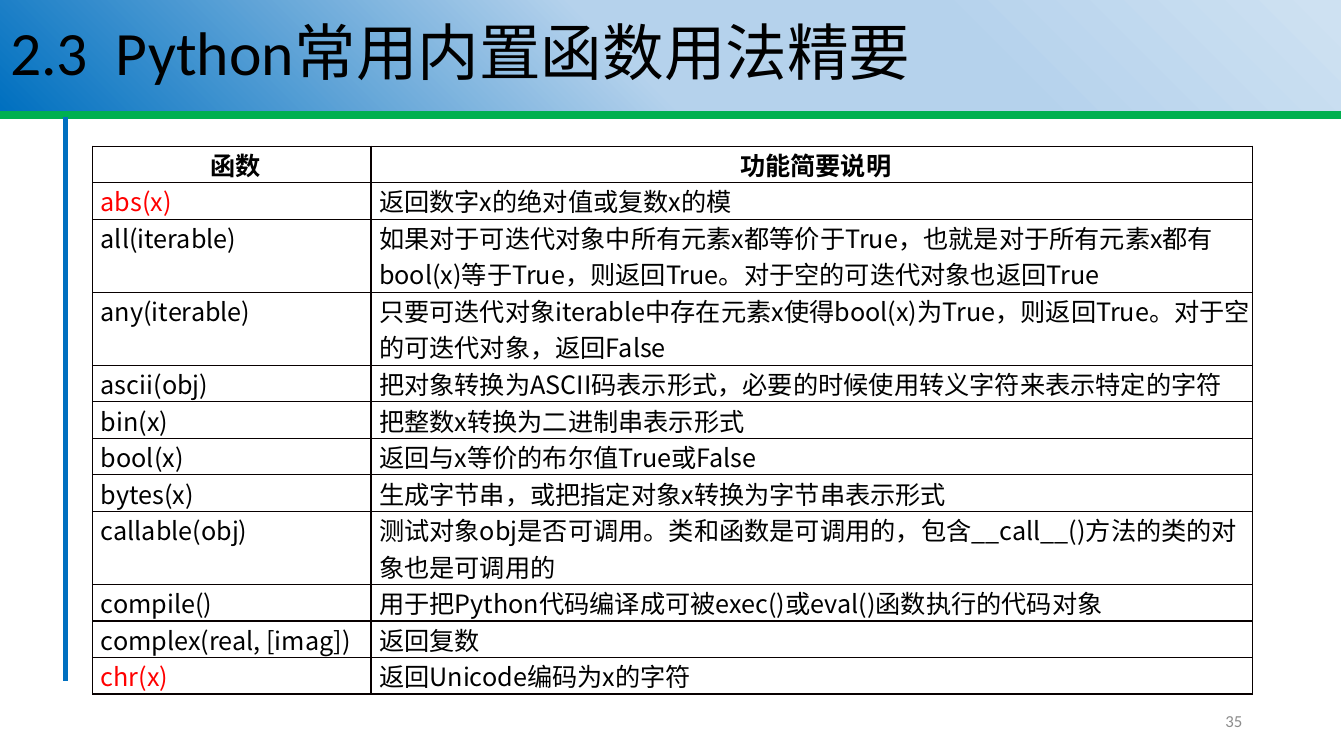
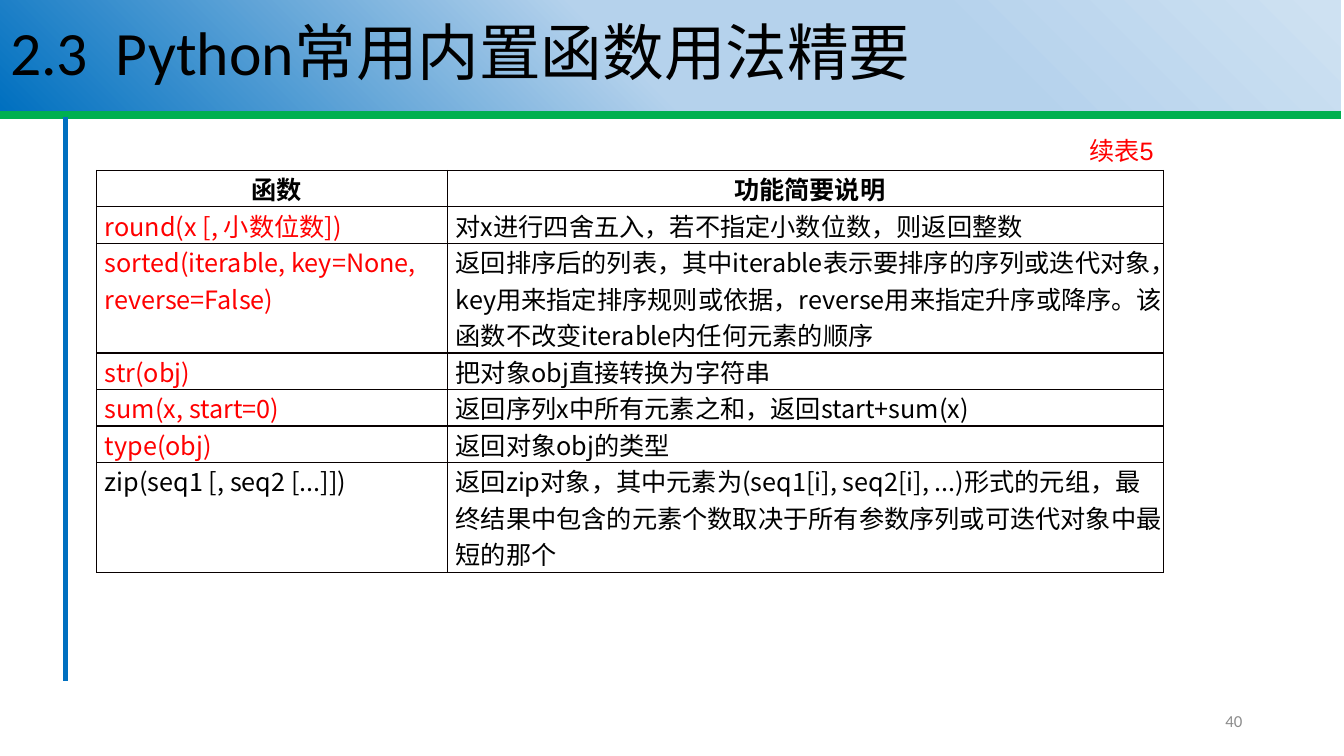
from lxml import etree
from pptx import Presentation
from pptx.dml.color import RGBColor
from pptx.enum.shapes import MSO_CONNECTOR
from pptx.enum.text import MSO_ANCHOR, MSO_AUTO_SIZE, PP_ALIGN
from pptx.oxml import parse_xml
from pptx.oxml.ns import nsdecls, qn
from pptx.util import Inches, Pt

STRAIGHT = MSO_CONNECTOR.STRAIGHT
MIDDLE, TOP = MSO_ANCHOR.MIDDLE, MSO_ANCHOR.TOP
LEFT, CENTER, RIGHT = PP_ALIGN.LEFT, PP_ALIGN.CENTER, PP_ALIGN.RIGHT
NO_FIT = MSO_AUTO_SIZE.NONE

BLACK = RGBColor(0x00, 0x00, 0x00)
INK = RGBColor(0x08, 0x00, 0x00)
RED = RGBColor(0xFF, 0x00, 0x00)
GREEN = RGBColor(0x00, 0xB0, 0x50)
BLUE = RGBColor(0x00, 0x70, 0xC0)
GRAY = RGBColor(0x8C, 0x8C, 0x8C)
PALE = RGBColor(0xCE, 0xE1, 0xF2)
SKY = RGBColor(0xB5, 0xD2, 0xEC)

HAN = "Noto Sans CJK SC"
WIDE, HIGH = 13.33, 7.5
SPAN = 13.3
LINE = Inches(8.7) // 24
BAND = [(1, PALE), (29, SKY), (53, SKY), (100, BLUE)]
TITLE = "2.3  Python常用内置函数用法精要"
HEADS = ("函数", "功能简要说明")

FIRST = [
    (1, RED, "abs(x)", "返回数字x的绝对值或复数x的模"),
    (2, BLACK, "all(iterable)",
     "如果对于可迭代对象中所有元素x都等价于True，也就是对于所有元素x都有bool(x)等于True，则返回True。对于空的可迭代对象也返回True"),
    (2, BLACK, "any(iterable)",
     "只要可迭代对象iterable中存在元素x使得bool(x)为True，则返回True。对于空的可迭代对象，返回False"),
    (1, BLACK, "ascii(obj)", "把对象转换为ASCII码表示形式，必要的时候使用转义字符来表示特定的字符"),
    (1, BLACK, "bin(x)", "把整数x转换为二进制串表示形式"),
    (1, BLACK, "bool(x)", "返回与x等价的布尔值True或False"),
    (1, BLACK, "bytes(x)", "生成字节串，或把指定对象x转换为字节串表示形式"),
    (2, BLACK, "callable(obj)",
     "测试对象obj是否可调用。类和函数是可调用的，包含__call__()方法的类的对象也是可调用的"),
    (1, BLACK, "compile()", "用于把Python代码编译成可被exec()或eval()函数执行的代码对象"),
    (1, BLACK, "complex(real, [imag])", "返回复数"),
    (1, RED, "chr(x)", "返回Unicode编码为x的字符"),
]
LAST = [
    (1, RED, "round(x [, 小数位数])", "对x进行四舍五入，若不指定小数位数，则返回整数"),
    (3, RED, "sorted(iterable, key=None, reverse=False)",
     "返回排序后的列表，其中iterable表示要排序的序列或迭代对象，key用来指定排序规则或依据，reverse用来指定升序或降序。该函数不改变iterable内任何元素的顺序"),
    (1, RED, "str(obj)", "把对象obj直接转换为字符串"),
    (1, RED, "sum(x, start=0)", "返回序列x中所有元素之和，返回start+sum(x)"),
    (1, RED, "type(obj)", "返回对象obj的类型"),
    (3, BLACK, "zip(seq1 [, seq2 [...]])",
     "返回zip对象，其中元素为(seq1[i], seq2[i], ...)形式的元组，最终结果中包含的元素个数取决于所有参数序列或可迭代对象中最短的那个"),
]


def write(frame, text, size, color, face, align=LEFT, bold=False):
    para = frame.paragraphs[0]
    para.text = text
    para.alignment = align
    font = para.font
    font.size, font.bold, font.name = Pt(size), bold, face
    font.color.rgb = color
    return para


def add_rule(slide, start, end, color, width):
    line = slide.shapes.add_connector(
        STRAIGHT, *(Inches(v) for v in (*start, *end)))
    line.line.color.rgb = color
    line.line.width = Pt(width)
    etree.SubElement(line._element.spPr, qn("a:effectLst"))


def add_note(slide, box, text, size, color, face, anchor):
    note = slide.shapes.add_textbox(*(Inches(v) for v in box))
    frame = note.text_frame
    frame.word_wrap = True
    frame.vertical_anchor = anchor
    write(frame, text, size, color, face, RIGHT)


def add_title(slide, box):
    title = slide.shapes.title
    title.left, title.top, title.width, title.height = map(Inches, box)
    stops = "".join(
        f'<a:gs pos="{pos * 1000}"><a:srgbClr val="{color}"/></a:gs>'
        for pos, color in BAND)
    title._element.spPr.append(parse_xml(
        f'<a:gradFill {nsdecls("a")} rotWithShape="1"><a:gsLst>{stops}</a:gsLst>'
        '<a:lin ang="8100000" scaled="0"/></a:gradFill>'))
    frame = title.text_frame
    frame.word_wrap = True
    frame.auto_size = NO_FIT
    frame.vertical_anchor = MIDDLE
    write(frame, TITLE, 44, BLACK, "Calibri").line_spacing = 0.9


def add_page(deck, number):
    slide = deck.slides.add_slide(deck.slide_layouts[5])
    add_title(slide, (0, 0, SPAN, 1.1))
    add_rule(slide, (0, 1.14), (SPAN, 1.14), GREEN, 5.25)
    add_rule(slide, (0.65, 1.16), (0.65, 6.76), BLUE, 3.75)
    add_note(slide, (9.42, 6.95, 3, 0.4), number, 12, GRAY, "Calibri", MIDDLE)
    return slide


def fill_cell(cell, text, color, align=LEFT, bold=False):
    cell.margin_left = Inches(0.08)
    cell.margin_right = cell.margin_top = cell.margin_bottom = 0
    write(cell.text_frame, text, 18, color, HAN, align, bold)
    props = cell._tc.get_or_add_tcPr()
    for side in "LRTB":
        props.append(parse_xml(
            f'<a:ln{side} {nsdecls("a")} w="12700"><a:solidFill>'
            f'<a:srgbClr val="{INK}"/></a:solidFill></a:ln{side}>'))
    cell.fill.background()


def add_grid(slide, left, top, widths, rows):
    heights = [LINE] + [row[0] * LINE for row in rows]
    table = slide.shapes.add_table(
        len(heights), len(widths), Inches(left), Inches(top),
        Inches(sum(widths)), sum(heights)).table
    table.first_row = table.horz_banding = False
    for col, width in zip(table.columns, widths):
        col.width = Inches(width)
    for row, height in zip(table.rows, heights):
        row.height = height
    for col, text in enumerate(HEADS):
        fill_cell(table.cell(0, col), text, BLACK, CENTER, True)
    for num, (_, color, name, use) in enumerate(rows, 1):
        fill_cell(table.cell(num, 0), name, color)
        fill_cell(table.cell(num, 1), use, BLACK)


def main():
    deck = Presentation()
    deck.slide_width, deck.slide_height = Inches(WIDE), Inches(HIGH)
    add_grid(add_page(deck, "35"), 0.92, 1.45, (2.76, 8.74), FIRST)
    slide = add_page(deck, "40")
    add_grid(slide, 0.96, 1.69, (3.48, 7.1), LAST)
    add_note(slide, (10.1, 1.29, 1.44, 0.4), "续表5", 18, RED, "Arial", TOP)
    deck.save("out.pptx")


if __name__ == "__main__":
    main()
